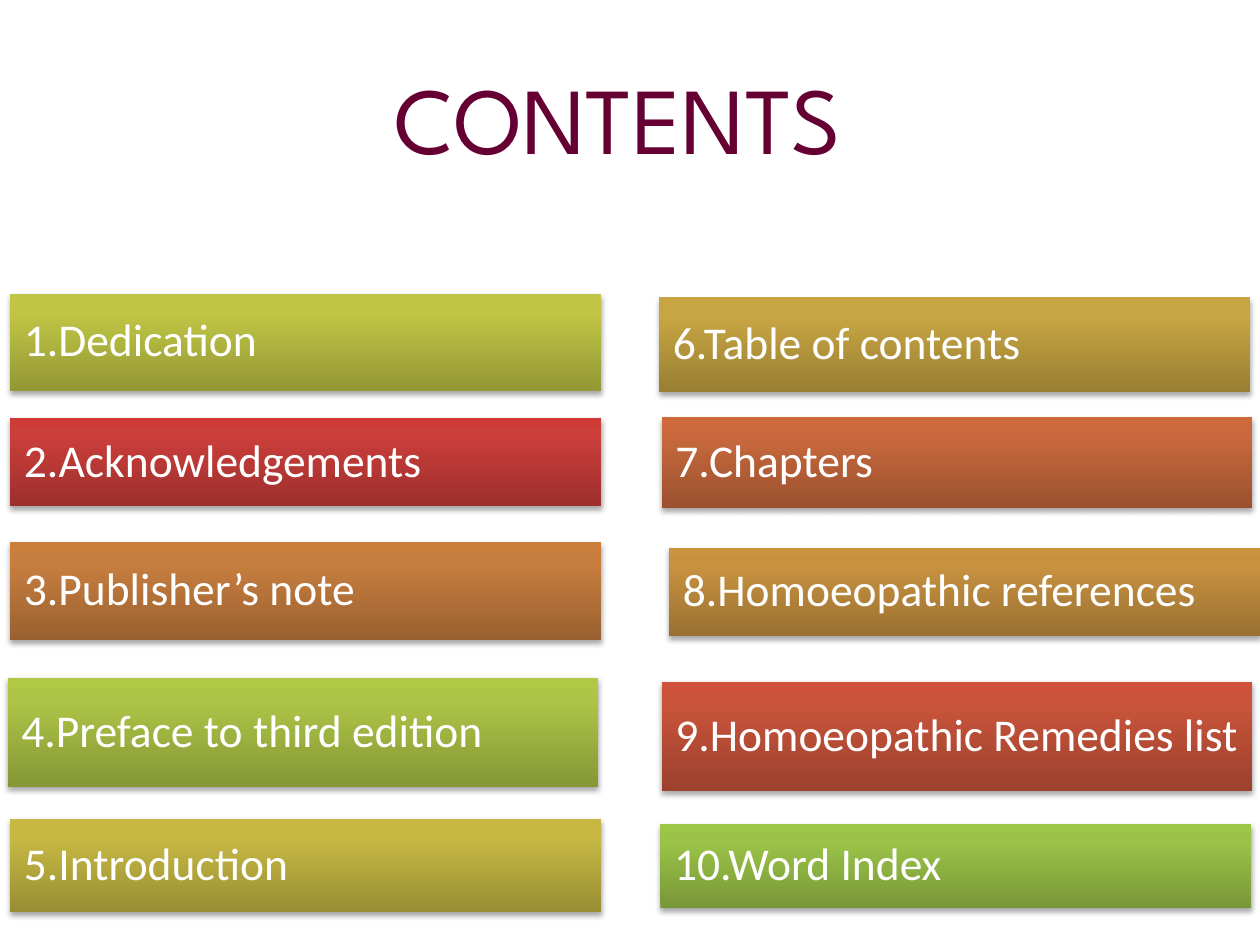
"""Build a contents slide with two columns of gradient bars."""
from copy import deepcopy

from lxml import etree
from pptx import Presentation
from pptx.dml.color import RGBColor
from pptx.enum.shapes import MSO_SHAPE
from pptx.enum.text import MSO_ANCHOR, PP_ALIGN
from pptx.oxml.ns import qn
from pptx.util import Inches, Pt

RECT = MSO_SHAPE.RECTANGLE
MIDDLE = MSO_ANCHOR.MIDDLE
LEFT, CENTER = PP_ALIGN.LEFT, PP_ALIGN.CENTER

COLORS = {"title": "660033", "text": "FFFFFF", "shadow": "000000"}
TITLE = "CONTENTS "
BAR_WIDTH, INSET = 4.69, 0.11
STOPS = (0, 0.8, 1)

# label, left, top, height, gradient from bottom to top
BARS = [
    ("1.Dedication", 0.08, 2.33, 0.77, ("949835", "C0C545", "C3C843")),
    ("2.Acknowledgements", 0.08, 3.32, 0.7, ("9C2F2D", "CB3E3A", "CE3B37")),
    ("3.Publisher’s note", 0.08, 4.3, 0.78, ("9A6130", "C87E3F", "CC7E3C")),
    ("4.Preface to third edition", 0.06, 5.38, 0.87, ("859736", "ADC446", "B0C844")),
    ("5.Introduction", 0.08, 6.5, 0.74, ("988E34", "C6B843", "C9BB41")),
    ("6.Table of contents", 5.23, 2.36, 0.75, ("997F33", "C7A542", "CAA740")),
    ("7.Chapters", 5.25, 3.31, 0.72, ("9B512F", "C9693D", "CD693B")),
    ("8.Homoeopathic references", 5.31, 4.35, 0.7, ("9A7031", "C79240", "CB933E")),
    ("9.Homoeopathic Remedies list", 5.25, 5.41, 0.87, ("9B412E", "CA543B", "CE5239")),
    ("10.Word Index", 5.24, 6.54, 0.67, ("779737", "9BC348", "9DC746")),
]


def style_text(p, font, size, color, align):
    p.alignment = align
    f = p.runs[0].font
    f.name, f.size = font, Pt(size)
    f.color.rgb = RGBColor.from_string(color)


def fill_gradient(sp, colors):
    sp.fill.gradient()
    sp.fill.gradient_angle = 90
    stop_list = next(sp._element.spPr.iter(qn("a:gsLst")))
    stop_list.append(deepcopy(stop_list[-1]))
    for stop, position, color in zip(sp.fill.gradient_stops, STOPS, colors):
        stop.position = position
        stop.color.rgb = RGBColor.from_string(color)


def add_shadow(sp):
    sp.shadow.inherit = False
    effects = sp._element.spPr.find(qn("a:effectLst"))
    shadow = etree.SubElement(effects, qn("a:outerShdw"), blurRad=str(Pt(3.1)),
                              dist=str(Pt(1.8)), dir="5400000", rotWithShape="0")
    color = etree.SubElement(shadow, qn("a:srgbClr"), val=COLORS["shadow"])
    etree.SubElement(color, qn("a:alpha"), val="35000")


def add_bar(s, label, left, top, height, colors):
    sp = s.shapes.add_shape(RECT, Inches(left), Inches(top), Inches(BAR_WIDTH), Inches(height))
    fill_gradient(sp, colors)
    sp.line.fill.background()
    add_shadow(sp)
    tf = sp.text_frame
    tf.word_wrap = True
    tf.vertical_anchor = MIDDLE
    tf.margin_left = tf.margin_right = tf.margin_top = tf.margin_bottom = Inches(INSET)
    p = tf.paragraphs[0]
    p.text = label
    p.line_spacing = 0.9
    style_text(p, "Calibri", 26, COLORS["text"], LEFT)


def main():
    prs = Presentation()
    prs.slide_width, prs.slide_height = Inches(10), Inches(7.5)
    s = prs.slides.add_slide(prs.slide_layouts[5])
    title = s.shapes.title
    title.left, title.top, title.width, title.height = map(Inches, (0.5, 0.3, 9, 1.25))
    title.text_frame.text = TITLE
    title.text_frame.vertical_anchor = MIDDLE
    style_text(title.text_frame.paragraphs[0], "League Spartan", 54, COLORS["title"], CENTER)
    for bar in BARS:
        add_bar(s, *bar)
    prs.save("out.pptx")


if __name__ == "__main__":
    main()
